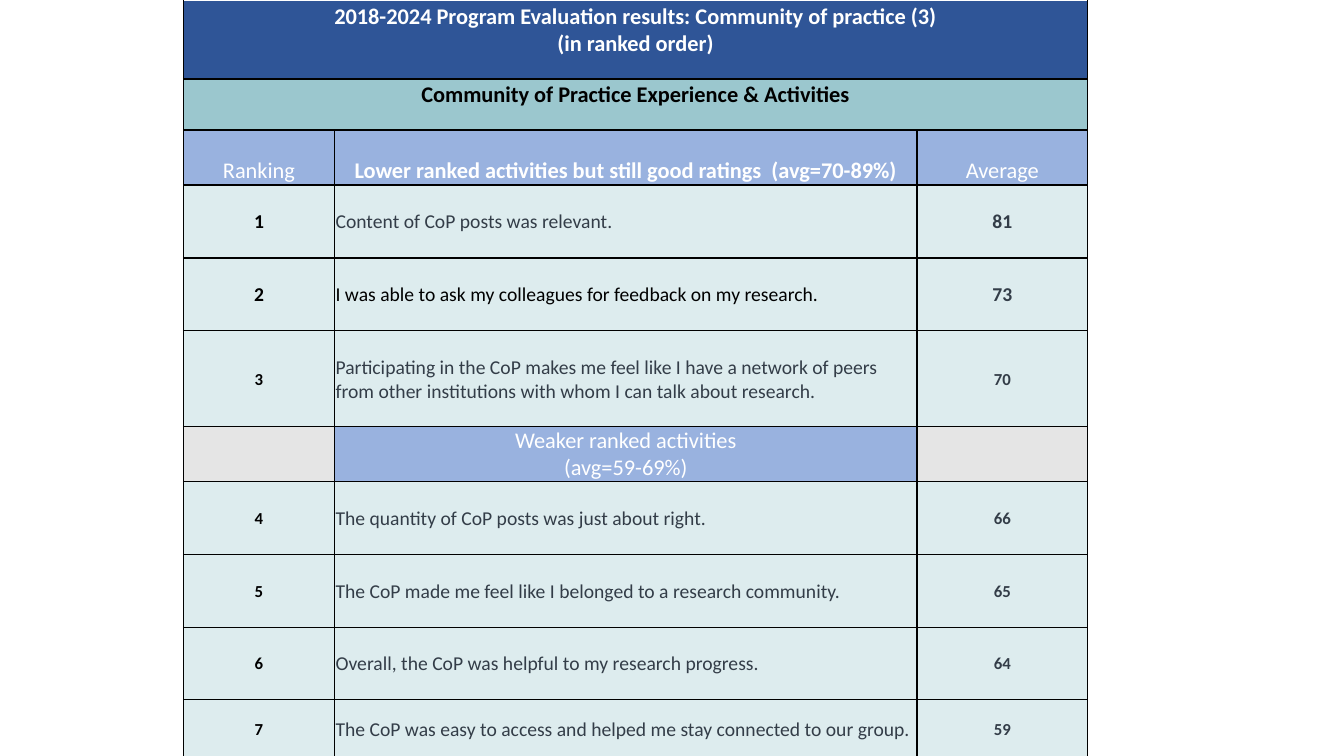
from dataclasses import dataclass

from lxml import etree
from pptx import Presentation
from pptx.dml.color import RGBColor
from pptx.enum.text import MSO_ANCHOR, PP_ALIGN
from pptx.oxml.ns import qn
from pptx.util import Pt

BOTTOM, MIDDLE = MSO_ANCHOR.BOTTOM, MSO_ANCHOR.MIDDLE
LEFT, CENTER = PP_ALIGN.LEFT, PP_ALIGN.CENTER


@dataclass(frozen=True)
class Theme:
    font: str = "Calibri"
    heading: int = 16
    body: int = 14
    small: int = 12
    white: str = "FFFFFF"
    black: str = "000000"
    slate: str = "333D48"
    navy: str = "2F5597"
    teal: str = "9BC7CE"
    blue: str = "8FAADC"
    pale: str = "DDECEE"
    gray: str = "BFBFBF"
    blue_opacity: int = 90
    gray_opacity: int = 40
    border: int = 1


THEME = Theme()
COLUMN_WIDTHS = (108, 416, 122)
TITLE_HEIGHT, SUBTITLE_HEIGHT, HEADING_HEIGHT = 56.4, 36.5, 39.3
BANNER_GAP = 15

# rank, activity, average, row height, number size, activity color
LOWER_RANKED = (
    ("1", "Content of CoP posts was relevant.", "81", 52.1, THEME.body, THEME.slate),
    ("2", "I was able to ask my colleagues for feedback on my research.",
     "73", 52.1, THEME.body, THEME.black),
    ("3", "Participating in the CoP makes me feel like I have a network of peers "
     "from other institutions with whom I can talk about research.",
     "70", 68.6, THEME.small, THEME.slate),
)
WEAKER_RANKED = (
    ("4", "The quantity of CoP posts was just about right.",
     "66", 52.1, THEME.small, THEME.slate),
    ("5", "The CoP made me feel like I belonged to a research community.",
     "65", 52.1, THEME.small, THEME.slate),
    ("6", "Overall, the CoP was helpful to my research progress.",
     "64", 51.5, THEME.small, THEME.slate),
    ("7", "The CoP was easy to access and helped me stay connected to our group.",
     "59", 42, THEME.small, THEME.slate),
)


def add_borders(cell, top_color):
    properties = cell._tc.get_or_add_tcPr()
    for side in ("lnL", "lnR", "lnT", "lnB"):
        line = etree.SubElement(properties, qn(f"a:{side}"), w=str(Pt(THEME.border)))
        fill = etree.SubElement(line, qn("a:solidFill"))
        color = top_color if side == "lnT" else THEME.black
        etree.SubElement(fill, qn("a:srgbClr"), val=color)


def style_cell(cell, color, opacity=100, top_color=THEME.black):
    add_borders(cell, top_color)
    cell.fill.solid()
    cell.fill.fore_color.rgb = RGBColor.from_string(color)
    if opacity < 100:
        tint = cell._tc.tcPr.find(qn("a:solidFill"))[0]
        etree.SubElement(tint, qn("a:alpha"), val=str(opacity * 1000))


def write_cell(cell, lines, size, color, bold=False, align=CENTER,
               anchor=MIDDLE, inset=0, gap_below=0):
    cell.margin_left = cell.margin_right = cell.margin_top = Pt(inset)
    cell.margin_bottom = Pt(gap_below)
    cell.vertical_anchor = anchor
    for index, line in enumerate(lines):
        frame = cell.text_frame
        para = frame.add_paragraph() if index else frame.paragraphs[0]
        para.alignment = align
        span = para.add_run()
        span.text = line
        span.font.name = THEME.font
        span.font.size = Pt(size)
        span.font.bold = bold
        span.font.color.rgb = RGBColor.from_string(color)


def fill_banner(table, row, lines, fill, color, top_color=THEME.black):
    """Fill a heading that spans every column."""
    last = len(COLUMN_WIDTHS) - 1
    for column in range(last + 1):
        style_cell(table.cell(row, column), fill, top_color=top_color)
    table.cell(row, 0).merge(table.cell(row, last))
    write_cell(table.cell(row, 0), lines, THEME.heading, color, bold=True,
               anchor=BOTTOM, gap_below=BANNER_GAP)


def fill_column_headings(table, row):
    headings = (("Ranking", False),
                ("Lower ranked activities but still good ratings  (avg=70-89%)", True),
                ("Average", False))
    for column, (heading, bold) in enumerate(headings):
        cell = table.cell(row, column)
        style_cell(cell, THEME.blue, THEME.blue_opacity)
        write_cell(cell, [heading], THEME.heading, THEME.white, bold, anchor=BOTTOM)


def fill_weaker_heading(table, row):
    for column in (0, 2):
        style_cell(table.cell(row, column), THEME.gray, THEME.gray_opacity)
    cell = table.cell(row, 1)
    style_cell(cell, THEME.blue, THEME.blue_opacity)
    write_cell(cell, ["Weaker ranked activities", "(avg=59-69%)"],
               THEME.heading, THEME.white, anchor=BOTTOM)


def fill_activities(table, first_row, activities):
    for row, activity in enumerate(activities, first_row):
        rank, text, average, _, number_size, text_color = activity
        rank_cell, text_cell, average_cell = table.rows[row].cells
        for cell in (rank_cell, text_cell, average_cell):
            style_cell(cell, THEME.pale)
        write_cell(rank_cell, [rank], number_size, THEME.black, True, inset=0.72)
        write_cell(text_cell, [text], THEME.body, text_color, align=LEFT, inset=0.72)
        write_cell(average_cell, [average], number_size, THEME.slate, True, inset=0.72)


def add_results_table(page, left, top):
    heights = [TITLE_HEIGHT, SUBTITLE_HEIGHT, HEADING_HEIGHT,
               *(activity[3] for activity in LOWER_RANKED), HEADING_HEIGHT,
               *(activity[3] for activity in WEAKER_RANKED)]
    box = page.shapes.add_table(len(heights), len(COLUMN_WIDTHS), Pt(left), Pt(top),
                                Pt(sum(COLUMN_WIDTHS)), Pt(sum(heights)))
    table = box.table
    table.first_row = table.horz_banding = False
    for column, width in zip(table.columns, COLUMN_WIDTHS):
        column.width = Pt(width)
    for row, height in zip(table.rows, heights):
        row.height = Pt(height)

    fill_banner(table, 0, ["2018-2024 Program Evaluation results: Community of practice (3)",
                           "(in ranked order)"], THEME.navy, THEME.white, THEME.white)
    fill_banner(table, 1, ["Community of Practice Experience & Activities"],
                THEME.teal, THEME.black)
    fill_column_headings(table, 2)
    fill_activities(table, 3, LOWER_RANKED)
    weaker_row = 3 + len(LOWER_RANKED)
    fill_weaker_heading(table, weaker_row)
    fill_activities(table, weaker_row + 1, WEAKER_RANKED)


def main():
    deck = Presentation()
    deck.slide_width, deck.slide_height = Pt(960), Pt(540)
    page = deck.slides.add_slide(deck.slide_layouts[6])
    add_results_table(page, left=131, top=0)
    deck.save("out.pptx")


if __name__ == "__main__":
    main()
